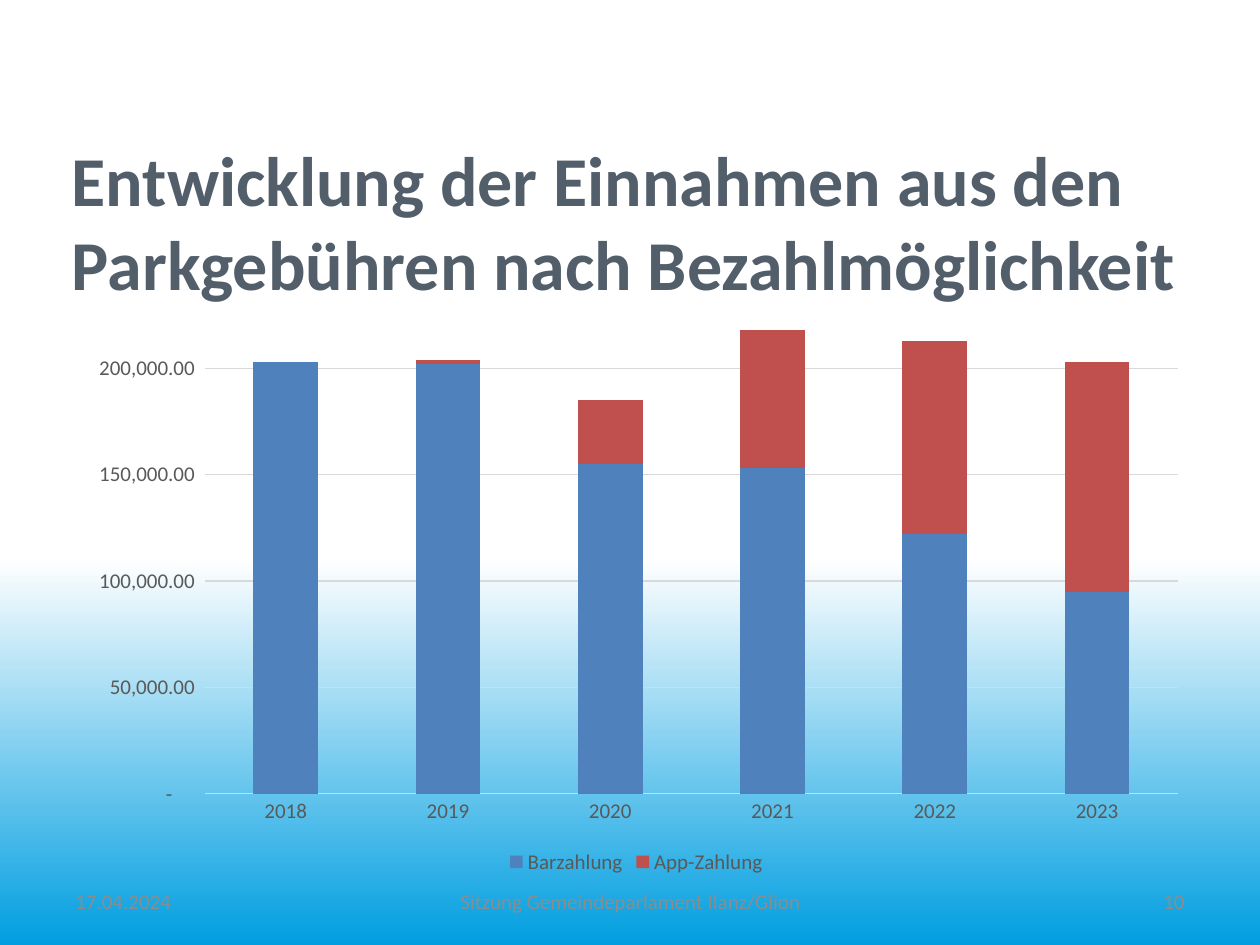
import pptx
import pptx.chart.data
import pptx.dml.color
import pptx.enum.chart
import pptx.enum.text
import pptx.util
from dataclasses import dataclass

Inches, Pt = pptx.util.Inches, pptx.util.Pt
Align, Anchor = pptx.enum.text.PP_ALIGN, pptx.enum.text.MSO_ANCHOR


def rgb(value):
    return pptx.dml.color.RGBColor.from_string(value)


@dataclass(frozen=True)
class Theme:
    font: str = "Calibri"
    title_size: int = 40
    small_size: int = 12
    title: str = "525E6A"
    footer: str = "8C8C8C"
    label: str = "595959"
    rule: str = "D9D9D9"
    rule_width: float = 0.75
    background: tuple = ((0.59, "FFFFFF"), (1.0, "009EE0"))


THEME = Theme()

# Content
TITLE = "Entwicklung der Einnahmen aus den Parkgebühren nach Bezahlmöglichkeit"
YEARS = ["2018", "2019", "2020", "2021", "2022", "2023"]
SERIES = [
    ("Barzahlung", "4F81BD", [203000, 202000, 155000, 153000, 122000, 95000]),
    ("App-Zahlung", "C0504D", [0, 2000, 30000, 65000, 91000, 108000]),
]
NUMBER_FORMAT = '_(* #,##0.00_);_(* \\(#,##0.00\\);_(* "-"??_);_(@_)'
# Text, share of slide width at the left, share taken, alignment
FOOTERS = [
    ("17.04.2024", 0.05, 0.233, Align.LEFT),
    ("Sitzung Gemeindeparlament Ilanz/Glion", 0.342, 0.317, Align.CENTER),
    ("10", 0.717, 0.233, Align.RIGHT),
]

# Layout
WIDTH, HEIGHT = Inches(10), Inches(7.5)
MARGIN = Inches(0.57)
BODY_WIDTH = Inches(8.96)
TITLE_TOP, TITLE_HEIGHT = Inches(1.08), Inches(1.04)
CHART_TOP, CHART_HEIGHT = Inches(2.41), Inches(4.57)
FOOTER_TOP, FOOTER_HEIGHT = Inches(6.95), Inches(0.4)


def style_font(font, size, color, bold=False):
    font.name, font.size, font.bold = THEME.font, Pt(size), bold
    font.color.rgb = rgb(color)


def style_line(line):
    line.color.rgb = rgb(THEME.rule)
    line.width = Pt(THEME.rule_width)


def fill_background(slide):
    fill = slide.background.fill
    fill.gradient()
    fill.gradient_angle = 270
    for stop, (position, color) in zip(fill.gradient_stops, THEME.background):
        stop.position = position
        stop.color.rgb = rgb(color)


def add_title(slide):
    title = slide.shapes.title
    title.left, title.top = MARGIN, TITLE_TOP
    title.width, title.height = BODY_WIDTH, TITLE_HEIGHT
    frame = title.text_frame
    frame.margin_left = frame.margin_top = frame.margin_right = frame.margin_bottom = 0
    frame.word_wrap = True
    frame.auto_size = pptx.enum.text.MSO_AUTO_SIZE.NONE
    frame.vertical_anchor = Anchor.TOP
    frame.text = TITLE
    paragraph = frame.paragraphs[0]
    paragraph.alignment = Align.LEFT
    style_font(paragraph.font, THEME.title_size, THEME.title, bold=True)


def add_chart(slide):
    data = pptx.chart.data.CategoryChartData(number_format=NUMBER_FORMAT)
    data.categories = YEARS
    for name, _, values in SERIES:
        data.add_series(name, values)
    chart = slide.shapes.add_chart(
        pptx.enum.chart.XL_CHART_TYPE.COLUMN_STACKED,
        MARGIN, CHART_TOP, BODY_WIDTH, CHART_HEIGHT, data).chart
    style_font(chart.font, THEME.small_size, THEME.label)
    chart.has_title = False
    chart.has_legend = True
    chart.legend.position = pptx.enum.chart.XL_LEGEND_POSITION.BOTTOM
    chart.legend.include_in_layout = False
    style_font(chart.legend.font, THEME.small_size, THEME.label)

    # Columns
    plot = chart.plots[0]
    plot.gap_width, plot.overlap = 150, 100
    plot.vary_by_categories = False
    for series, (_, color, _) in zip(plot.series, SERIES):
        series.format.fill.solid()
        series.format.fill.fore_color.rgb = rgb(color)

    # Axes
    for axis in (chart.category_axis, chart.value_axis):
        axis.major_tick_mark = axis.minor_tick_mark = pptx.enum.chart.XL_TICK_MARK.NONE
        style_font(axis.tick_labels.font, THEME.small_size, THEME.label)
    style_line(chart.category_axis.format.line)
    value_axis = chart.value_axis
    value_axis.minimum_scale, value_axis.maximum_scale = 0, 225000
    value_axis.major_unit = 50000
    value_axis.format.line.fill.background()
    style_line(value_axis.major_gridlines.format.line)
    value_axis.tick_labels.number_format = NUMBER_FORMAT
    value_axis.tick_labels.number_format_is_linked = False


def add_footers(slide):
    for text, left, width, alignment in FOOTERS:
        box = slide.shapes.add_textbox(
            round(WIDTH * left), FOOTER_TOP, round(WIDTH * width), FOOTER_HEIGHT)
        frame = box.text_frame
        frame.word_wrap = True
        frame.vertical_anchor = Anchor.MIDDLE
        frame.text = text
        paragraph = frame.paragraphs[0]
        paragraph.alignment = alignment
        style_font(paragraph.font, THEME.small_size, THEME.footer)


def main():
    presentation = pptx.Presentation()
    presentation.slide_width, presentation.slide_height = WIDTH, HEIGHT
    slide = presentation.slides.add_slide(presentation.slide_layouts[5])
    fill_background(slide)
    add_title(slide)
    add_chart(slide)
    add_footers(slide)
    presentation.save("out.pptx")


if __name__ == "__main__":
    main()
